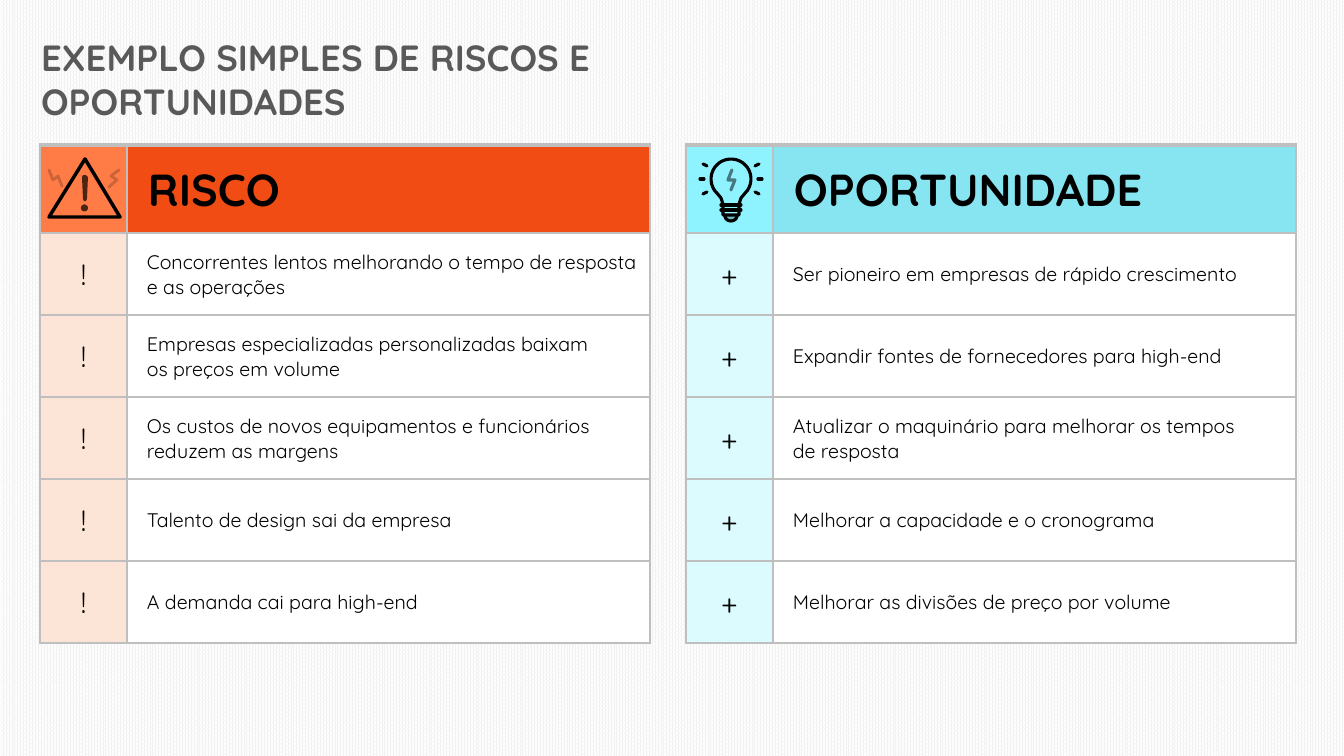
import math

from lxml import etree
from pptx import Presentation
from pptx import util as u
from pptx.dml.color import RGBColor
from pptx.enum import dml, shapes, text
from pptx.oxml import ns

PX = 914400 / 100.8
FONT = "Quicksand"
BLACK = RGBColor(0x00, 0x00, 0x00)
WHITE = RGBColor(0xFF, 0xFF, 0xFF)
TITLE_GRAY = RGBColor(0x59, 0x59, 0x59)
PATTERN_GRAY = RGBColor(0xF2, 0xF2, 0xF2)
BORDER_GRAY = RGBColor(0xBF, 0xBF, 0xBF)
ORANGE = RGBColor(0xF0, 0x4C, 0x13)
ORANGE_LIGHT = RGBColor(0xFF, 0x7C, 0x46)
ORANGE_PALE = RGBColor(0xFC, 0xE4, 0xD6)
CYAN = RGBColor(0x86, 0xE5, 0xF1)
CYAN_LIGHT = RGBColor(0x8E, 0xF3, 0xFF)
CYAN_PALE = RGBColor(0xDC, 0xFB, 0xFF)


def px(length):
    return u.Emu(round(length * PX))


def draw_outline(group, points, width=0, closed=False, opacity=100):
    """Draw a stroked outline, or a filled one when the width is 0."""
    tenths = [(x * 10, y * 10) for x, y in points]
    builder = group.shapes.build_freeform(*tenths[0], scale=PX / 10)
    builder.add_line_segments(tenths[1:], close=closed)
    shape = builder.convert_to_shape()
    shape.shadow.inherit = False
    if width:
        shape.fill.background()
        shape.line.width = u.Pt(width)
        shape.line.color.rgb = BLACK
        line = shape.element.spPr.find(ns.qn("a:ln"))
        line.set("cap", "rnd")
        etree.SubElement(line, ns.qn("a:round"))
    else:
        shape.line.fill.background()
        shape.fill.solid()
        shape.fill.fore_color.rgb = BLACK
    if opacity < 100:
        for color in shape.element.spPr.iter(ns.qn("a:srgbClr")):
            etree.SubElement(color, ns.qn("a:alpha"), val=str(opacity * 1000))


presentation = Presentation()
presentation.slide_width = px(1344)
presentation.slide_height = px(756)
slide = presentation.slides.add_slide(presentation.slide_layouts[5])

# Background
background = slide.background.fill
background.patterned()
background.pattern = dml.MSO_PATTERN.PERCENT_80
background.fore_color.rgb = PATTERN_GRAY
background.back_color.rgb = WHITE

# Title
title = slide.shapes.title
title.left, title.top, title.width, title.height = px(31), px(30), px(873), px(98)
title.text_frame.text = "EXEMPLO SIMPLES DE RISCOS E OPORTUNIDADES"
title.text_frame.word_wrap = True
title.text_frame.auto_size = text.MSO_AUTO_SIZE.NONE
title.text_frame.vertical_anchor = text.MSO_ANCHOR.TOP
title_paragraph = title.text_frame.paragraphs[0]
title_paragraph.alignment = text.PP_ALIGN.LEFT
title_paragraph.font.name = FONT
title_paragraph.font.size = u.Pt(26)
title_paragraph.font.bold = True
title_paragraph.font.color.rgb = TITLE_GRAY

# Tables: left edge, heading, mark, colours (icon, heading, mark), entries
panels = [
    (40, "RISCO", "!", (ORANGE_LIGHT, ORANGE, ORANGE_PALE), [
        "Concorrentes lentos melhorando o tempo de resposta e as operações",
        "Empresas especializadas personalizadas baixam\vos preços em volume",
        "Os custos de novos equipamentos e funcionários reduzem as margens",
        "Talento de design sai da empresa",
        "A demanda cai para high-end",
    ]),
    (686, "OPORTUNIDADE", "+", (CYAN_LIGHT, CYAN, CYAN_PALE), [
        "Ser pioneiro em empresas de rápido crescimento",
        "Expandir fontes de fornecedores para high-end",
        "Atualizar o maquinário para melhorar os tempos\vde resposta",
        "Melhorar a capacidade e o cronograma",
        "Melhorar as divisões de preço por volume",
    ]),
]
for left, heading, mark, (icon_color, heading_color, mark_color), entries in panels:
    rows = [("", heading)] + [(mark, entry) for entry in entries]
    table = slide.shapes.add_table(
        len(rows), 2, px(left), px(145), px(610), px(498)).table
    table.first_row = False
    table.horz_banding = False
    table.columns[0].width, table.columns[1].width = px(87), px(523)
    for row_index, row in enumerate(rows):
        is_heading = row_index == 0
        table.rows[row_index].height = px(88 if is_heading else 82)
        fills = (icon_color, heading_color) if is_heading else (mark_color, WHITE)
        for column_index, words in enumerate(row):
            cell = table.cell(row_index, column_index)
            cell.vertical_anchor = text.MSO_ANCHOR.MIDDLE
            cell.margin_left = px(1 + (19 + is_heading) * column_index)
            cell.margin_right = cell.margin_top = px(1)
            cell.margin_bottom = 0
            # Borders go before the fill
            properties = cell._tc.get_or_add_tcPr()
            widths = {"L": 1, "R": 2.25 if column_index else 1,
                      "T": 3 if is_heading else 1, "B": 1}
            for side, width in widths.items():
                border = etree.SubElement(
                    properties, ns.qn(f"a:ln{side}"), w=str(u.Pt(width)))
                border_fill = etree.SubElement(border, ns.qn("a:solidFill"))
                etree.SubElement(
                    border_fill, ns.qn("a:srgbClr"), val=str(BORDER_GRAY))
            cell.fill.solid()
            cell.fill.fore_color.rgb = fills[column_index]
            if not words:
                continue
            paragraph = cell.text_frame.paragraphs[0]
            paragraph.text = words
            if column_index == 0:
                paragraph.alignment = text.PP_ALIGN.CENTER
            size = 32 if is_heading else (21, 14)[column_index]
            for run in paragraph.runs:
                run.font.name = FONT
                run.font.size = u.Pt(size)
                run.font.bold = is_heading
                run.font.color.rgb = BLACK

# Warning icon
warning = slide.shapes.add_group_shape()
for bolt in ([(49, 170), (53, 180), (58, 176), (62, 186)],
             [(119, 170), (111, 176), (117, 180), (109, 187)]):
    draw_outline(warning, bolt, width=2, opacity=20)
draw_outline(warning, [(49, 217), (85, 159), (120, 217)], width=2.5, closed=True)
draw_outline(warning, [(82, 177), (83, 175), (86, 175), (88, 177), (87, 199),
                       (86, 201), (84, 201), (83, 199)], closed=True, opacity=70)
dot = [(84.5 + 3.5 * math.cos(math.radians(angle)),
        208 + 3.5 * math.sin(math.radians(angle))) for angle in range(0, 360, 15)]
draw_outline(warning, dot, closed=True, opacity=70)

# Light bulb icon
bulb = slide.shapes.add_group_shape()
center_x, center_y = 731, 179
socket = [(center_x + 6 * math.cos(math.radians(angle)),
           216 + 5 * math.sin(math.radians(angle))) for angle in range(0, 181, 15)]
draw_outline(bulb, socket, closed=True, opacity=24)
draw_outline(bulb, socket, width=2.25)
glass = [(center_x + 20 * math.cos(math.radians(angle)),
          center_y + 20 * math.sin(math.radians(angle)))
         for angle in range(135, 406, 10)]
neck = [(741, 198), (739, 204), (739, 215), (723, 215), (723, 204), (721, 198)]
draw_outline(bulb, glass + neck, width=2.25, closed=True)
for thread_y in (205, 210):
    draw_outline(bulb, [(721, thread_y), (741, thread_y)], width=2.25)
for side in (-1, 1):
    for slope in (-1, 0, 1):
        inner, outer = ((24, 13), (28, 15)) if slope else ((27, 0), (31, 0))
        draw_outline(bulb, [(center_x + side * x, center_y + slope * y)
                            for x, y in (inner, outer)], width=2.25)
draw_outline(bulb, [(732, 170), (728, 180), (735, 180), (731, 190)],
             width=2.25, opacity=50)

presentation.save("out.pptx")
